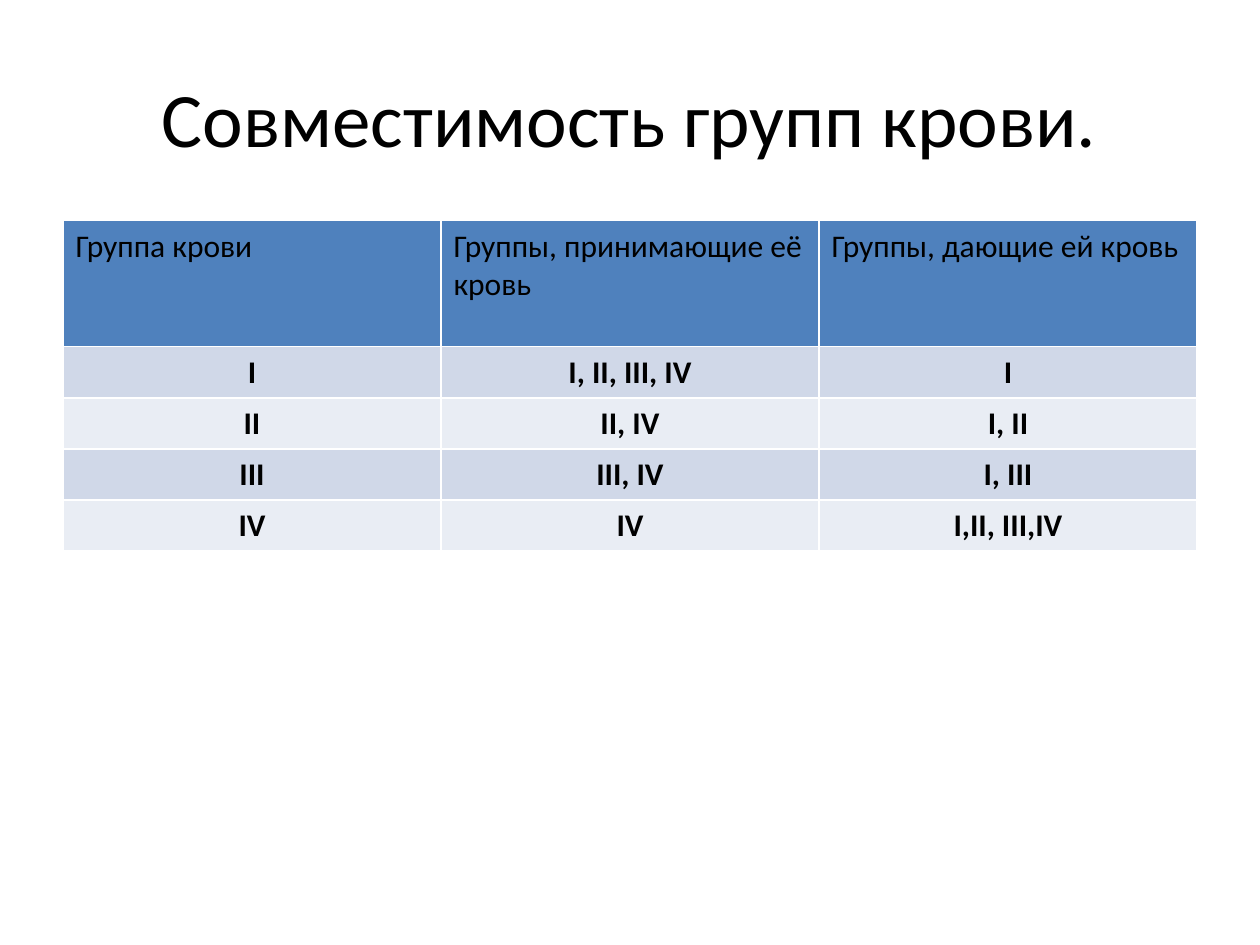
from pptx import Presentation
from pptx.dml.color import RGBColor
from pptx.enum.text import MSO_ANCHOR, PP_ALIGN
from pptx.util import Cm, Pt

LEFT, CENTER = PP_ALIGN.LEFT, PP_ALIGN.CENTER
MIDDLE = MSO_ANCHOR.MIDDLE

FONT = "Calibri"
BLACK = RGBColor(0x00, 0x00, 0x00)
HEADER_BLUE = RGBColor(0x4F, 0x81, 0xBD)
BANDS = (RGBColor(0xD0, 0xD8, 0xE8), RGBColor(0xE9, 0xED, 0xF4))

# Content
TITLE = "Совместимость групп крови."
HEADER = ("Группа крови", "Группы, принимающие её кровь", "Группы, дающие ей кровь")
BLOOD_GROUPS = [
    ("I", "I, II, III, IV", "I"),
    ("II", "II, IV", "I, II"),
    ("III", "III, IV", "I, III"),
    ("IV", "IV", "I,II, III,IV"),
]

# Layout
MARGIN, CONTENT_WIDTH = Cm(1.27), Cm(22.86)
TITLE_TOP, TITLE_HEIGHT = Cm(0.76), Cm(3.18)
TABLE_TOP = Cm(4.45)
HEADER_HEIGHT, ROW_HEIGHT = Cm(2.54), Cm(1.03)


def write(frame, text, size=18, bold=False, align=LEFT):
    para = frame.paragraphs[0]
    para.alignment = align
    span = para.add_run()
    span.text = text
    span.font.name = FONT
    span.font.size = Pt(size)
    span.font.bold = bold
    span.font.color.rgb = BLACK


def add_title(page):
    box = page.shapes.title
    box.left, box.top = MARGIN, TITLE_TOP
    box.width, box.height = CONTENT_WIDTH, TITLE_HEIGHT
    box.text_frame.vertical_anchor = MIDDLE
    write(box.text_frame, TITLE, size=44, align=CENTER)


def add_blood_table(page):
    rows = [HEADER, *BLOOD_GROUPS]
    height = HEADER_HEIGHT + ROW_HEIGHT * len(BLOOD_GROUPS)
    # The default table style supplies the white cell borders
    table = page.shapes.add_table(
        len(rows), len(HEADER), MARGIN, TABLE_TOP, CONTENT_WIDTH, height
    ).table
    for row_index, values in enumerate(rows):
        is_header = row_index == 0
        table.rows[row_index].height = HEADER_HEIGHT if is_header else ROW_HEIGHT
        color = HEADER_BLUE if is_header else BANDS[(row_index - 1) % 2]
        for column_index, value in enumerate(values):
            cell = table.cell(row_index, column_index)
            cell.fill.solid()
            cell.fill.fore_color.rgb = color
            write(cell.text_frame, value, bold=not is_header,
                  align=LEFT if is_header else CENTER)


def main():
    deck = Presentation()
    deck.slide_width, deck.slide_height = Cm(25.4), Cm(19.05)
    page = deck.slides.add_slide(deck.slide_layouts[5])
    add_title(page)
    add_blood_table(page)
    deck.save("out.pptx")


if __name__ == "__main__":
    main()
